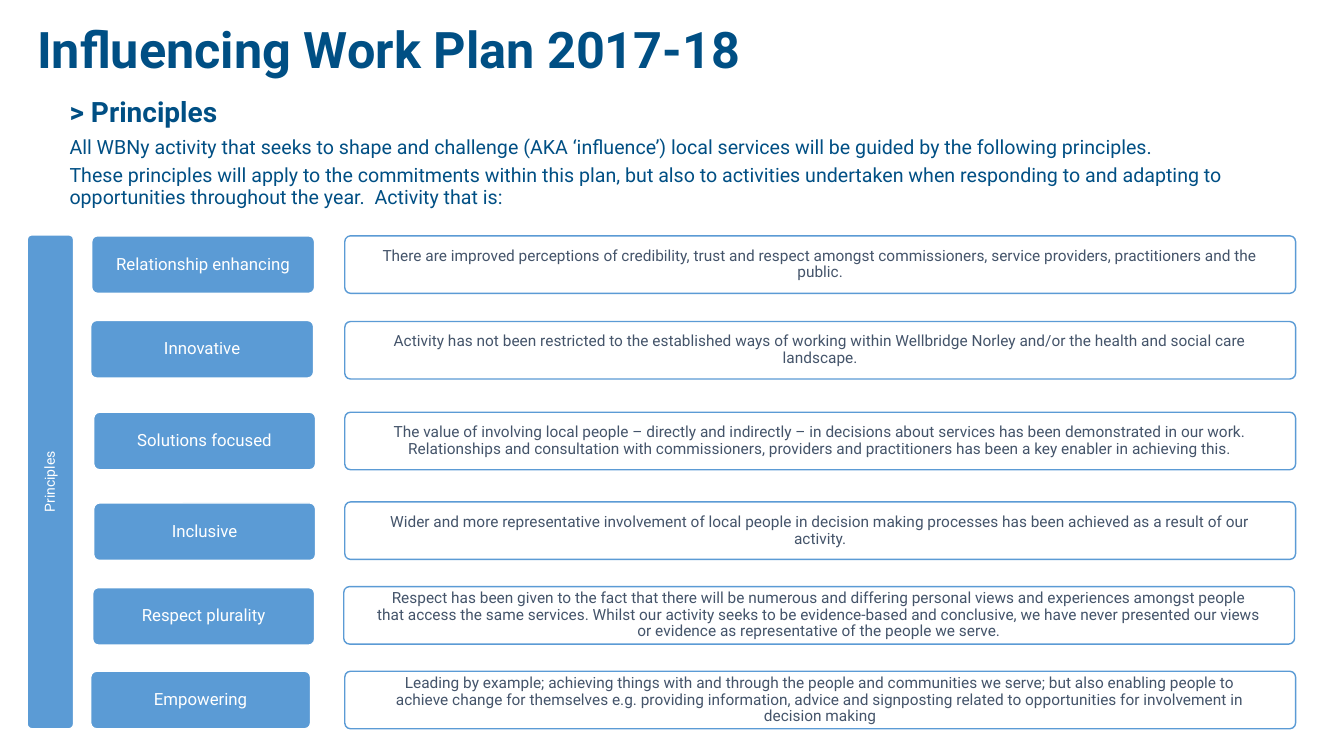
"""Build the Influencing Work Plan principles slide."""
from pptx import Presentation
from pptx.dml.color import RGBColor
from pptx.enum.shapes import MSO_SHAPE
from pptx.enum.text import MSO_ANCHOR, PP_ALIGN
from pptx.util import Inches, Pt

ROUND = MSO_SHAPE.ROUNDED_RECTANGLE
MIDDLE = MSO_ANCHOR.MIDDLE
CENTER = PP_ALIGN.CENTER
LEFT = PP_ALIGN.LEFT
NAVY, BLUE, SLATE, WHITE = "004F84", "5B9BD5", "44546A", "FFFFFF"


def write(frame, lines, color, align, side, edge=0.05):
    frame.word_wrap = True
    frame.vertical_anchor = MIDDLE
    frame.margin_left = frame.margin_right = Inches(side)
    frame.margin_top = frame.margin_bottom = Inches(edge)
    for i, (text, size, bold) in enumerate(lines):
        para = frame.add_paragraph() if i else frame.paragraphs[0]
        para.alignment = align
        para.line_spacing = 0.9
        para.space_after = Pt(size * 0.35)
        run = para.add_run()
        run.text = text
        run.font.name = "Roboto"
        run.font.size = Pt(size)
        run.font.bold = bold
        run.font.color.rgb = RGBColor.from_string(color)


def panel(box, text, size, fill, line, color, side):
    shape = slide.shapes.add_shape(ROUND, *map(Inches, box))
    shape.adjustments[0] = 0.1
    shape.shadow.inherit = False
    if fill:
        shape.fill.solid()
        shape.fill.fore_color.rgb = RGBColor.from_string(fill)
    else:
        shape.fill.background()
    shape.line.color.rgb = RGBColor.from_string(line)
    shape.line.width = Pt(1)
    write(shape.text_frame, [(text, size, False)], color, CENTER, side)
    return shape


prs = Presentation()
prs.slide_width = Inches(13.33)
prs.slide_height = Inches(7.5)
slide = prs.slides.add_slide(prs.slide_layouts[6])

title = slide.shapes.add_textbox(Inches(0.27), Inches(0.12), Inches(9.61), Inches(0.71))
write(title.text_frame, [("Influencing Work Plan 2017-18", 36, True)], NAVY, LEFT, 0.1)
title.text_frame.paragraphs[0].line_spacing = 1.0
title.text_frame.paragraphs[0].space_after = Pt(0)

intro = slide.shapes.add_textbox(Inches(0.65), Inches(0.52), Inches(11.84), Inches(2))
write(intro.text_frame, [
    ("> Principles", 20, True),
    ("All WBNy activity that seeks to shape and challenge (AKA ‘influence’) local "
     "services will be guided by the following principles.", 14, False),
    ("These principles will apply to the commitments within this plan, but also to "
     "activities undertaken when responding to and adapting to opportunities "
     "throughout the year.  Activity that is:", 14, False),
], NAVY, LEFT, 0.04, 0.04)

spine = panel((-1.95, 4.55, 4.9, 0.46), "Principles", 10, BLUE, WHITE, WHITE, 0.06)
spine.rotation = 270

rows = [
    (0.91, 2.34, 2.21, 3.42, 2.34, "Relationship enhancing",
     "There are improved perceptions of credibility, trust and respect amongst "
     "commissioners, service providers, practitioners and the public."),
    (0.9, 3.18, 2.21, 3.42, 3.19, "Innovative",
     "Activity has not been restricted to the established ways of working within "
     "Wellbridge Norley and/or the health and social care landscape."),
    (0.93, 4.09, 2.2, 3.42, 4.09, "Solutions focused",
     "The value of involving local people – directly and indirectly – in decisions "
     "about services has been demonstrated in our work. Relationships and "
     "consultation with commissioners, providers and practitioners has been a key "
     "enabler in achieving this."),
    (0.93, 4.99, 2.2, 3.42, 4.98, "Inclusive",
     "Wider and more representative involvement of local people in decision making "
     "processes has been achieved as a result of our activity."),
    (0.92, 5.83, 2.2, 3.41, 5.82, "Respect plurality",
     "Respect has been given to the fact that there will be numerous and differing "
     "personal views and experiences amongst people that access the same services. "
     "Whilst our activity seeks to be evidence-based and conclusive, we have never "
     "presented our views or evidence as representative of the people we serve."),
    (0.9, 6.66, 2.18, 3.42, 6.66, "Empowering",
     "Leading by example; achieving things with and through the people and "
     "communities we serve; but also enabling people to achieve change for "
     "themselves e.g. providing information, advice and signposting related to "
     "opportunities for involvement in decision making"),
]
for x, y, wide, left, top, name, aim in rows:
    panel((x, y, wide, 0.57), name, 12, BLUE, WHITE, WHITE, 0.06)
    panel((left, top, 9.43, 0.57), aim, 11, None, BLUE, SLATE, 0.31)

prs.save("out.pptx")
